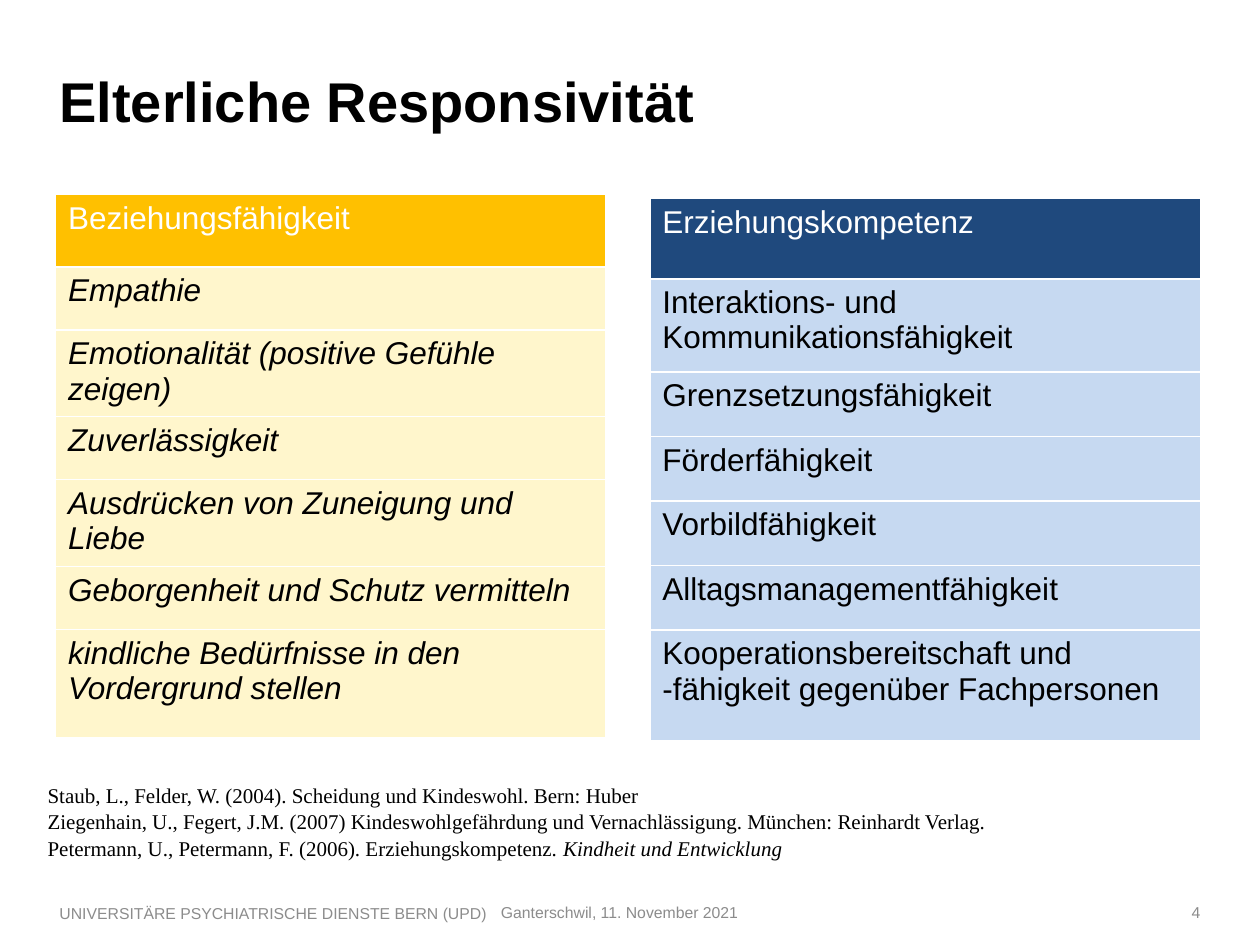
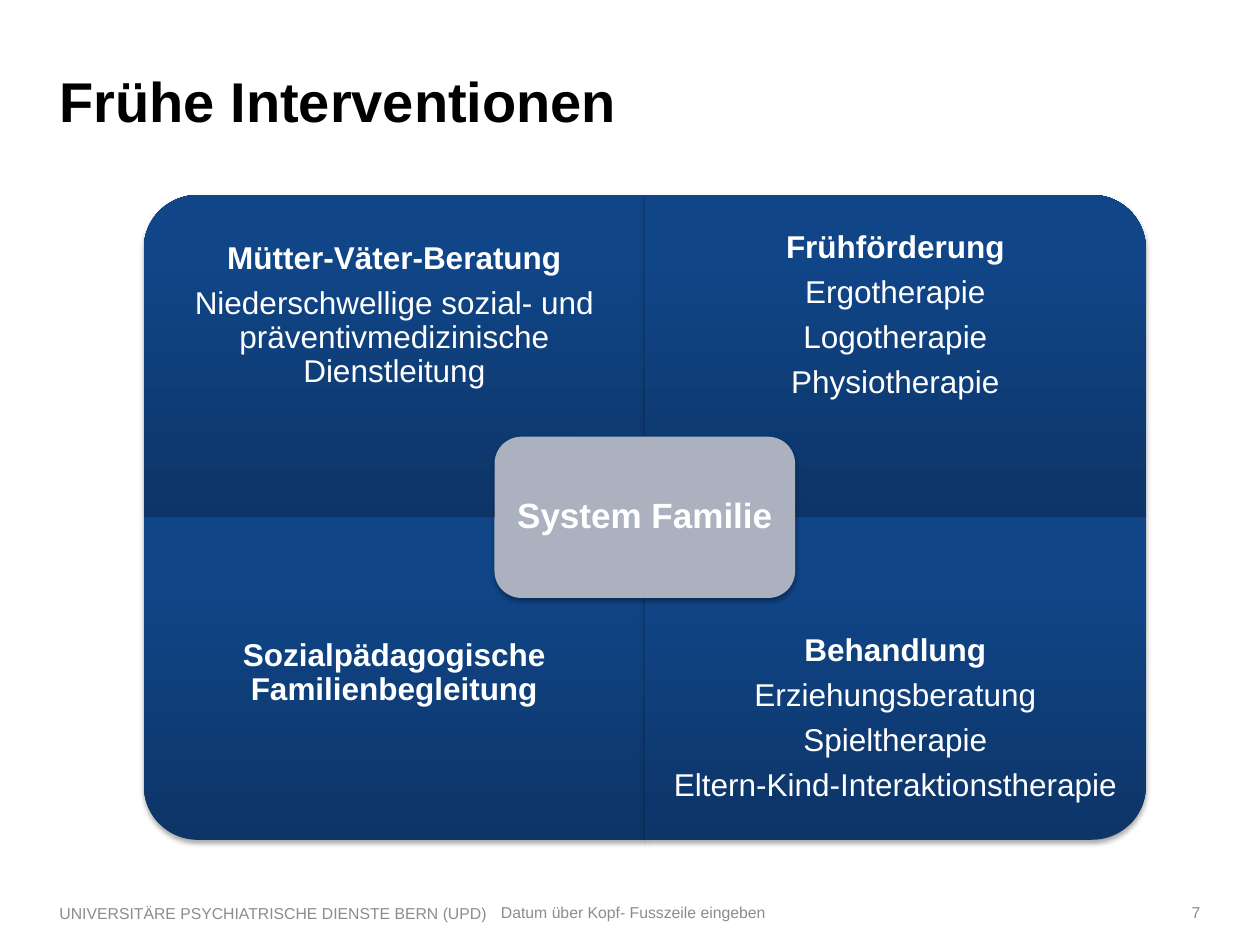
from dataclasses import dataclass

from lxml import etree
from pptx import Presentation
from pptx.dml.color import RGBColor
from pptx.enum import shapes, text
from pptx.oxml import ns
from pptx.util import Cm, Pt


@dataclass(frozen=True)
class Theme:
    sans: str = "Arial"
    serif: str = "Times New Roman"
    title: int = 32
    centre: int = 20
    body: int = 18
    source: int = 12
    footer: int = 9
    black: str = "000000"
    white: str = "FFFFFF"
    grey: str = "8C8C8C"
    gold: str = "FFC000"
    cream: str = "FFF6CC"
    navy: str = "1F497D"
    sky: str = "C6D9F1"
    panel_dark: str = "0D3568"
    panel_light: str = "104587"
    silver: str = "ACB1BF"


THEME = Theme()

# Content
FOOTER = "UNIVERSITÄRE PSYCHIATRISCHE DIENSTE BERN (UPD)"

COMPETENCE_TABLES = [
    dict(left=13.1, top=4.0, head=THEME.navy, fill=THEME.sky, italic=False, rows=[
        ("Erziehungskompetenz", 1.62),
        ("Interaktions- und Kommunikationsfähigkeit", 1.88),
        ("Grenzsetzungsfähigkeit", 1.3),
        ("Förderfähigkeit", 1.3),
        ("Vorbildfähigkeit", 1.3),
        ("Alltagsmanagementfähigkeit", 1.3),
        ("Kooperationsbereitschaft und\n-fähigkeit gegenüber Fachpersonen", 2.23),
    ]),
    dict(left=1.12, top=3.92, head=THEME.gold, fill=THEME.cream, italic=True, rows=[
        ("Beziehungsfähigkeit", 1.46),
        ("Empathie", 1.27),
        ("Emotionalität (positive Gefühle zeigen)", 1.75),
        ("Zuverlässigkeit", 1.27),
        ("Ausdrücken von Zuneigung und Liebe", 1.75),
        ("Geborgenheit und Schutz vermitteln", 1.27),
        ("kindliche Bedürfnisse in den Vordergrund stellen", 2.19),
    ]),
]
TABLE_WIDTH = 11.1

# Each source: upright part, italic part
SOURCES = [
    ("Staub, L., Felder, W. (2004). Scheidung und Kindeswohl. Bern: Huber", ""),
    ("Ziegenhain, U., Fegert, J.M. (2007) Kindeswohlgefährdung und "
     "Vernachlässigung. München: Reinhardt Verlag.", ""),
    ("Petermann, U., Petermann, F. (2006). Erziehungskompetenz. ",
     "Kindheit und Entwicklung"),
]

# Each panel: column, row, rotation, extra bottom inset, lines (heading first)
PANELS = [
    (0, 0, 270, 0, ["Mütter-Väter-Beratung",
                    "Niederschwellige sozial- und präventivmedizinische Dienstleitung"]),
    (1, 0, 0, 0, ["Frühförderung", "Ergotherapie", "Logotherapie", "Physiotherapie"]),
    (0, 1, 180, 1.83, ["Sozialpädagogische Familienbegleitung"]),
    (1, 1, 90, 0, ["Behandlung", "Erziehungsberatung", "Spieltherapie",
                   "Eltern-Kind-Interaktionstherapie"]),
]
CENTRE = "System Familie"
PANEL_LEFT, PANEL_TOP, PANEL_WIDTH, PANEL_HEIGHT = 2.9, 3.93, 10.1, 6.5


def colour(value):
    return RGBColor.from_string(value)


def style(para, size, ink, face=THEME.sans, bold=False, italic=False):
    font = para.font
    font.name, font.size, font.bold, font.italic = face, Pt(size), bold, italic
    font.color.rgb = colour(ink)


def set_frame(frame, insets, anchor):
    """Wrap the text and set its insets (left, top, right, bottom) in cm."""
    frame.word_wrap = True
    frame.auto_size = text.MSO_AUTO_SIZE.NONE
    frame.vertical_anchor = anchor
    (frame.margin_left, frame.margin_top,
     frame.margin_right, frame.margin_bottom) = map(Cm, insets)


def add_text(page, area, insets=(0, 0.13, 0, 0.13), anchor=text.MSO_ANCHOR.MIDDLE):
    box = page.shapes.add_textbox(*map(Cm, area))
    set_frame(box.text_frame, insets, anchor)
    return box.text_frame


def add_page(deck, title, note, number):
    """Add a page with its title and the three footer texts."""
    page = deck.slides.add_slide(deck.slide_layouts[5])
    heading = page.shapes.title
    heading.left, heading.top, heading.width, heading.height = map(Cm, (1.2, 1.2, 19.5, 2.13))
    set_frame(heading.text_frame, (0, 0, 0, 0), text.MSO_ANCHOR.TOP)
    heading.text_frame.text = title
    para = heading.text_frame.paragraphs[0]
    para.alignment = text.PP_ALIGN.LEFT
    para.line_spacing = 1.1
    style(para, THEME.title, THEME.black, bold=True)

    for words, area, align in [
        (note, (10.1, 18.06, 7.14, 0.66), text.PP_ALIGN.LEFT),
        (FOOTER, (1.2, 17.88, 8.9, 1.04), text.PP_ALIGN.LEFT),
        (number, (21.2, 18.06, 3, 0.66), text.PP_ALIGN.RIGHT),
    ]:
        para = add_text(page, area).paragraphs[0]
        para.text = words
        para.alignment = align
        style(para, THEME.footer, THEME.grey)
    return page


def add_competences(page, left, top, head, fill, italic, rows):
    total = sum(height for _, height in rows)
    area = map(Cm, (left, top, TABLE_WIDTH, total))
    table = page.shapes.add_table(len(rows), 1, *area).table
    for index, (words, height) in enumerate(rows):
        is_head = index == 0
        table.rows[index].height = Cm(height)
        cell = table.cell(index, 0)
        cell.text = words
        cell.fill.solid()
        cell.fill.fore_color.rgb = colour(head if is_head else fill)
        for para in cell.text_frame.paragraphs:
            style(para, THEME.body, THEME.white if is_head else THEME.black,
                  italic=italic and not is_head)


def add_sources(page):
    frame = add_text(page, (0.71, 15.62, 23, 2.2), (0.25, 0.13, 0.25, 0.13),
                     text.MSO_ANCHOR.TOP)
    for index, (upright, slanted) in enumerate(SOURCES):
        para = frame.add_paragraph() if index else frame.paragraphs[0]
        para.line_spacing = 1.05
        style(para, THEME.source, THEME.black, THEME.serif)
        para.add_run().text = upright
        if slanted:
            span = para.add_run()
            span.text = slanted
            span.font.italic = True


def drop_shadow(shape):
    shape.shadow.inherit = False
    effects = shape.element.spPr.find(ns.qn("a:effectLst"))
    outer = etree.SubElement(effects, ns.qn("a:outerShdw"), blurRad=str(Pt(3.1)),
                             dist=str(Pt(1.8)), dir="5400000", rotWithShape="0")
    ink = etree.SubElement(outer, ns.qn("a:srgbClr"), val=THEME.black)
    etree.SubElement(ink, ns.qn("a:alpha"), val="35000")


def add_block(page, kind, area):
    shape = page.shapes.add_shape(kind, *map(Cm, area))
    shape.line.fill.background()
    drop_shadow(shape)
    return shape


def fill_lines(frame, lines, size):
    """Write centred lines, the first one bold."""
    for index, words in enumerate(lines):
        para = frame.add_paragraph() if index else frame.paragraphs[0]
        para.text = words
        para.alignment = text.PP_ALIGN.CENTER
        para.line_spacing = 0.9
        para.space_after = Pt(6.3)
        style(para, size, THEME.white, bold=index == 0)


def add_panel(page, column, row, rotation, lift, lines):
    left = PANEL_LEFT + column * PANEL_WIDTH
    top = PANEL_TOP + row * PANEL_HEIGHT
    width, height = PANEL_WIDTH, PANEL_HEIGHT
    if rotation % 180:
        width, height = height, width
    panel = add_block(page, shapes.MSO_SHAPE.ROUND_1_RECTANGLE,
                      (left + (PANEL_WIDTH - width) / 2,
                       top + (PANEL_HEIGHT - height) / 2, width, height))
    panel.rotation = rotation
    panel.fill.gradient()
    panel.fill.gradient_angle = 90
    for stop, position, ink in zip(panel.fill.gradient_stops, (0, 0.8),
                                   (THEME.panel_dark, THEME.panel_light)):
        stop.position = position
        stop.color.rgb = colour(ink)
    panel.element.spPr.find(ns.qn("a:gradFill")).set("rotWithShape", "0")

    text_height = PANEL_HEIGHT * 0.75
    text_top = top + row * (PANEL_HEIGHT - text_height)
    frame = add_text(page, (left, text_top, PANEL_WIDTH, text_height),
                     (0.36, 0.36, 0.36, 0.36 + lift))
    fill_lines(frame, lines, THEME.body)


def add_centre(page):
    width, height = PANEL_WIDTH * 0.6, PANEL_HEIGHT * 0.5
    centre = add_block(page, shapes.MSO_SHAPE.ROUNDED_RECTANGLE,
                       (PANEL_LEFT + PANEL_WIDTH - width / 2,
                        PANEL_TOP + PANEL_HEIGHT - height / 2, width, height))
    centre.fill.solid()
    centre.fill.fore_color.rgb = colour(THEME.silver)
    set_frame(centre.text_frame, (0.2, 0.2, 0.2, 0.2), text.MSO_ANCHOR.MIDDLE)
    fill_lines(centre.text_frame, [CENTRE], THEME.centre)


def main():
    deck = Presentation()
    deck.slide_width, deck.slide_height = Cm(25.4), Cm(19.05)

    page = add_page(deck, "Elterliche Responsivität", "Ganterschwil, 11. November 2021", "4")
    for competences in COMPETENCE_TABLES:
        add_competences(page, **competences)
    add_sources(page)

    page = add_page(deck, "Frühe Interventionen", "Datum über Kopf- Fusszeile eingeben", "7")
    for panel in PANELS:
        add_panel(page, *panel)
    add_centre(page)

    deck.save("out.pptx")


if __name__ == "__main__":
    main()
